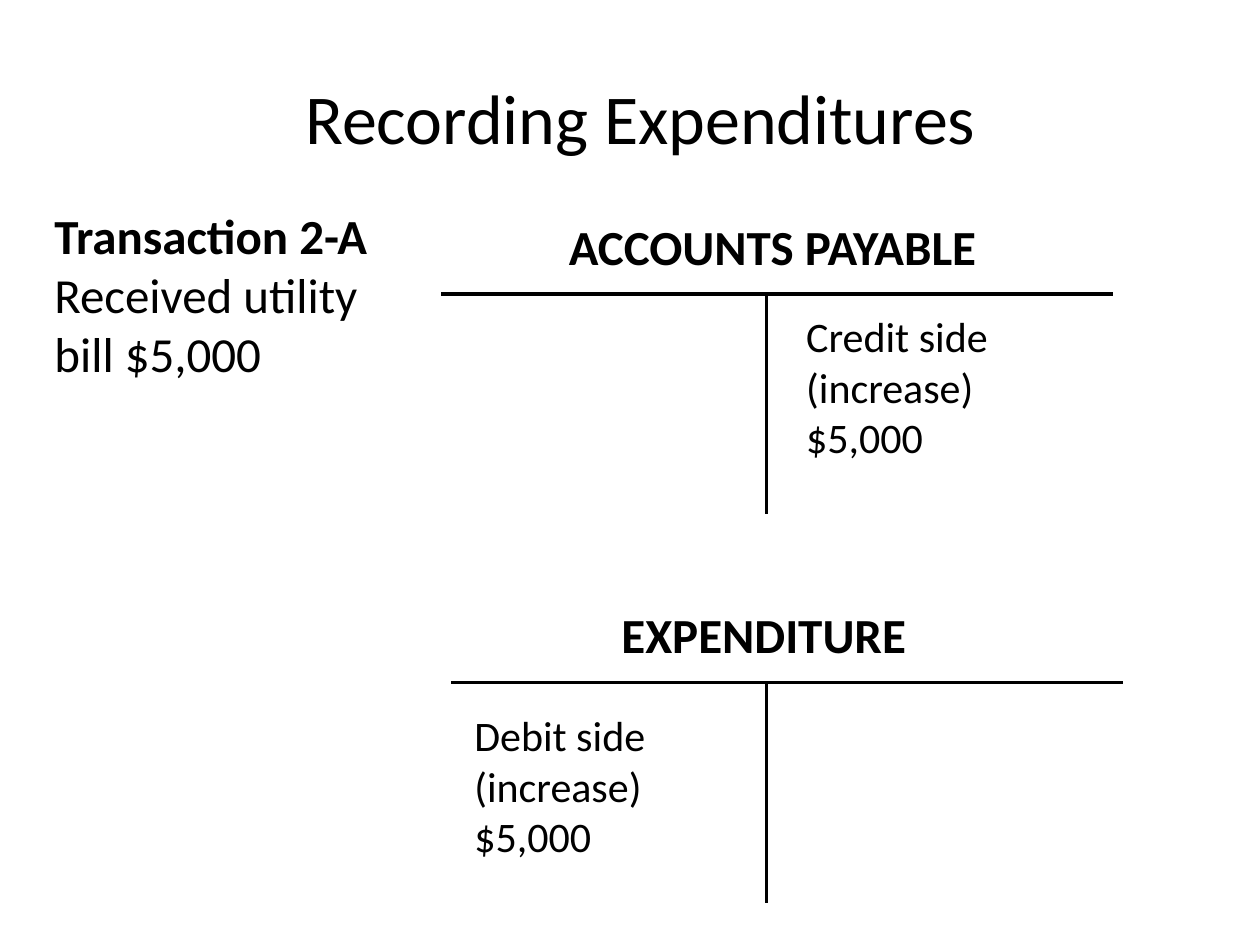
from pptx import Presentation
from pptx.dml.color import RGBColor
from pptx.enum.shapes import MSO_CONNECTOR
from pptx.enum.text import MSO_ANCHOR as Anchor, PP_ALIGN as Align
from pptx.oxml.ns import qn
from pptx.util import Pt
from lxml.etree import SubElement

BLACK = "000000"
FONT = "Calibri"
STEM_X = 438
RULE_WIDTH, STEM_HEIGHT = 384, 126
HEADING_RISE = 48

ACCOUNTS = [
    {"left": 252, "top": 168, "heading": "ACCOUNTS PAYABLE", "heading_left": 318,
     "heading_width": 264, "entry": ["Credit side", "(increase)", "$5,000"],
     "entry_left": 453.6, "entry_drop": 6},
    {"left": 258, "top": 390, "heading": "EXPENDITURE", "heading_left": 348,
     "heading_width": 181.5, "entry": ["Debit side", "(increase)", "$5,000"],
     "entry_left": 264, "entry_drop": 12},
]


def color(hex_value):
    return RGBColor.from_string(hex_value)


def add_text(page, bounds, lines, size, bold_lines=0, align=Align.LEFT, anchor=Anchor.TOP):
    """Add one paragraph per line; the first bold_lines of them are bold."""
    box = page.shapes.add_textbox(*map(Pt, bounds))
    frame = box.text_frame
    frame.word_wrap = True
    frame.vertical_anchor = anchor
    for index, line in enumerate(lines):
        para = frame.paragraphs[0] if index == 0 else frame.add_paragraph()
        para.alignment = align
        span = para.add_run()
        span.text = line
        span.font.color.rgb = color(BLACK)
        formats = {"name": FONT, "size": Pt(size), "bold": index < bold_lines}
        for name, value in formats.items():
            setattr(span.font, name, value)


def add_line(page, *ends):
    line = page.shapes.add_connector(MSO_CONNECTOR.STRAIGHT, *map(Pt, ends))
    line.line.width = Pt(2)
    line.line.color.rgb = color(BLACK)
    SubElement(line._element.spPr, qn("a:effectLst"))


def add_title(page, bounds):
    add_text(page, bounds, ["Recording Expenditures"], 40,
             align=Align.CENTER, anchor=Anchor.MIDDLE)


def add_transaction(page, bounds):
    add_text(page, bounds, ["Transaction 2-A", "Received utility bill $5,000"], 28, bold_lines=1)


def add_t_account(page, left, top, heading, heading_left, heading_width,
                  entry, entry_left, entry_drop):
    """Draw a T account whose horizontal rule starts at left, top."""
    add_line(page, left, top, left + RULE_WIDTH, top)
    add_line(page, STEM_X, top, STEM_X, top + STEM_HEIGHT)
    add_text(page, (heading_left, top - HEADING_RISE, heading_width, 41), [heading], 28,
             bold_lines=1)
    add_text(page, (entry_left, top + entry_drop, 165, 94), entry, 24)


def main():
    deck = Presentation()
    deck.slide_width, deck.slide_height = Pt(720), Pt(540)
    page = deck.slides.add_slide(deck.slide_layouts[6])
    add_title(page, (42, 21.6, 648, 90))
    for account in ACCOUNTS:
        add_t_account(page, **account)
    add_transaction(page, (24, 114, 204, 109))
    deck.save("out.pptx")


if __name__ == "__main__":
    main()
